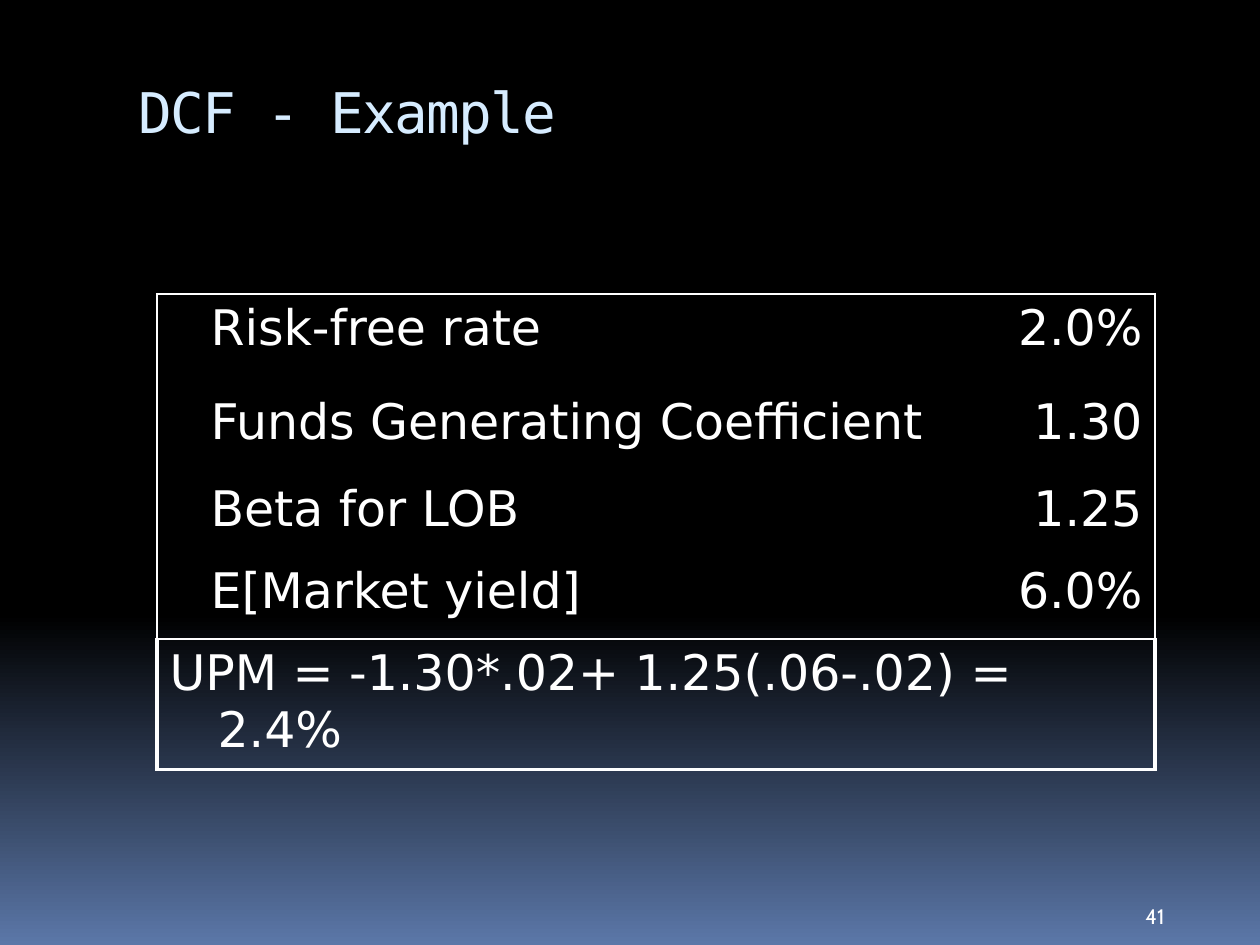
from dataclasses import dataclass

from lxml.etree import SubElement
from pptx import Presentation
from pptx.dml.color import RGBColor
from pptx.enum.text import MSO_ANCHOR, PP_ALIGN
from pptx.oxml.ns import qn
from pptx.util import Pt

PX = 914400 / 126


@dataclass(frozen=True)
class Theme:
    white: str = "FFFFFF"
    pale: str = "D6ECFF"
    black: str = "000000"
    blue: str = "5B77A8"
    mono: str = "DejaVu Sans Mono"
    sans: str = "DejaVu Sans"
    small: str = "Cabin"
    head: int = 32
    body: int = 28
    note: int = 12


T = Theme()
RATES = [
    ("Risk-free rate", "2.0%"),
    ("Funds Generating Coefficient", "1.30"),
    ("Beta for LOB", "1.25"),
    ("E[Market yield]", "6.0%"),
]
RESULT = "UPM = -1.30*.02+ 1.25(.06-.02) = 2.4%"


def emu(px):
    return round(px * PX)


def add_run(para, text, size, font, color):
    run = para.add_run()
    run.text = text
    run.font.size = Pt(size)
    run.font.name = font
    run.font.color.rgb = RGBColor.from_string(color)
    return run


def paint(slide):
    fill = slide.background.fill
    fill.gradient()
    fill.gradient_angle = 270
    for stop, (place, color) in zip(fill.gradient_stops, [(0.65, T.black), (1, T.blue)]):
        stop.position = place
        stop.color.rgb = RGBColor.from_string(color)


def add_title(slide, box, text):
    title = slide.shapes.title
    title.left, title.top, title.width, title.height = map(emu, box)
    frame = title.text_frame
    frame.vertical_anchor = MSO_ANCHOR.TOP
    para = frame.paragraphs[0]
    para.alignment = PP_ALIGN.LEFT
    run = add_run(para, text, T.head, T.mono, T.pale)
    run.font._element.set("spc", "-100")


def add_number(slide, box, text):
    frame = slide.shapes.add_textbox(*map(emu, box)).text_frame
    frame.word_wrap = True
    frame.vertical_anchor = MSO_ANCHOR.BOTTOM
    add_run(frame.paragraphs[0], text, T.note, T.small, T.white)


def set_edges(cell, edges):
    """Draw the given sides (points by letter) and clear the others."""
    props = cell._tc.get_or_add_tcPr()
    for side in "LRTB":
        line = SubElement(props, qn(f"a:ln{side}"), w=str(Pt(edges.get(side, 0))))
        if side in edges:
            fill = SubElement(line, qn("a:solidFill"))
            SubElement(fill, qn("a:srgbClr"), val=T.white)
        else:
            SubElement(line, qn("a:noFill"))
    cell.fill.background()


def fill_cell(cell, text, align=PP_ALIGN.LEFT):
    para = cell.text_frame.paragraphs[0]
    para.alignment = align
    # Hanging indent and proportional space above
    props = para._p.get_or_add_pPr()
    props.set("marL", str(emu(48)))
    props.set("indent", str(-emu(48)))
    space = SubElement(props, qn("a:spcBef"))
    SubElement(space, qn("a:spcPct"), val="20000")
    add_run(para, text, T.body, T.sans, T.white)


def add_rates(slide, box, cols, rows):
    table = slide.shapes.add_table(len(rows), len(cols), *map(emu, box)).table
    table.first_row = table.horz_banding = False
    for col, width in zip(table.columns, cols):
        col.width = emu(width)
    for row, height in zip(table.rows, rows):
        row.height = emu(height)

    # Frame around the rates, heavier around the result
    last, right = len(rows) - 1, len(cols) - 1
    for r in range(len(rows)):
        for c in range(len(cols)):
            side = 2.25 if r == last else 1.5
            edges = {}
            if c == 0:
                edges["L"] = side
            if c == right:
                edges["R"] = side
            if r in (0, last):
                edges["T"] = 1.5 if r == 0 else 1
            if r >= last - 1:
                edges["B"] = 2.25 if r == last else 1
            if r == last:
                edges.update(L=side, R=side)
            set_edges(table.cell(r, c), edges)

    # Labels and values
    for r, (label, value) in enumerate(RATES):
        fill_cell(table.cell(r, 1), label)
        fill_cell(table.cell(r, 2), value, PP_ALIGN.RIGHT)
    total = table.cell(last, 0)
    total.merge(table.cell(last, right))
    fill_cell(total, RESULT)


def main():
    deck = Presentation()
    deck.slide_width, deck.slide_height = emu(1260), emu(945)
    slide = deck.slides.add_slide(deck.slide_layouts[5])
    paint(slide)
    add_title(slide, (126, 71, 1071, 126), "DCF - Example")
    add_number(slide, (1133, 885, 74, 50), "41")
    add_rates(slide, (157, 294, 998, 471), (41, 746, 211), (94, 87, 82, 82, 126))
    deck.save("out.pptx")


if __name__ == "__main__":
    main()
